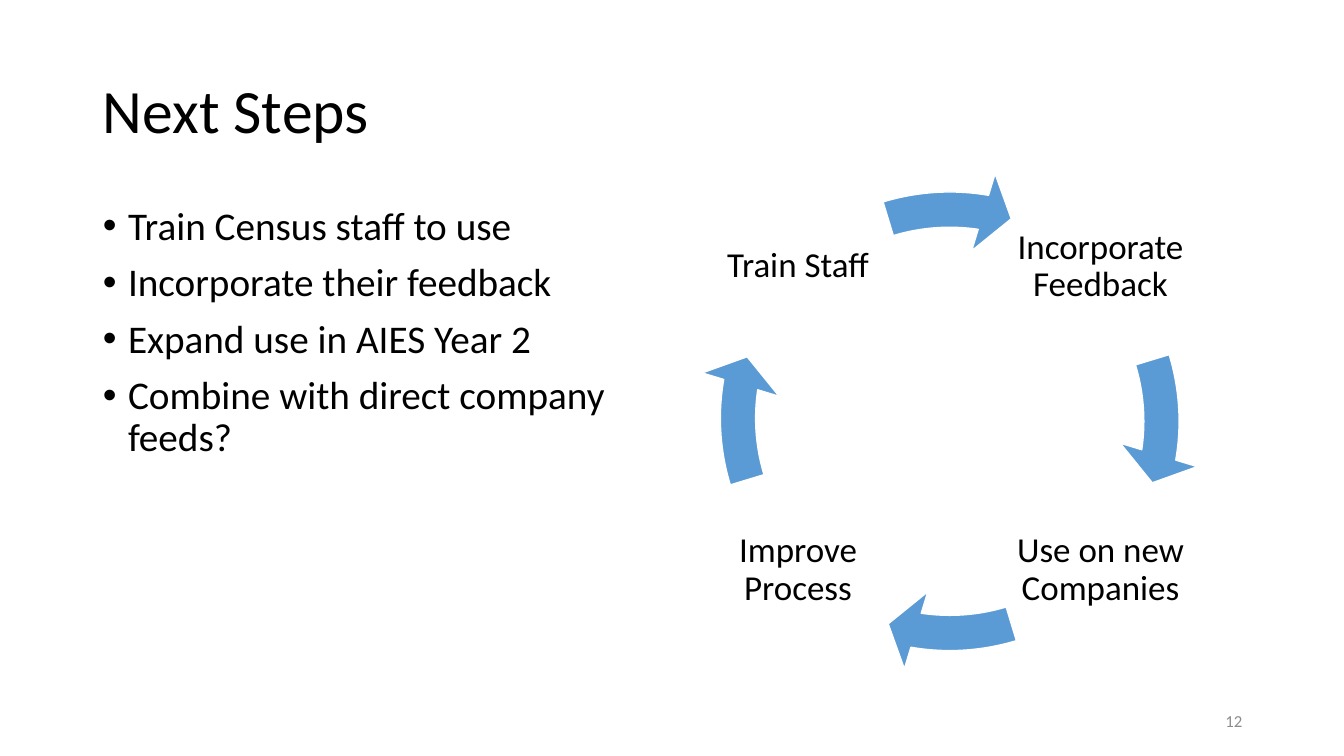
from dataclasses import dataclass

from lxml import etree
from pptx import Presentation
from pptx.dml.color import RGBColor
from pptx.enum import shapes, text
from pptx.oxml.ns import qn
from pptx.util import Inches, Pt

# Content
TITLE = "Next Steps"
STEPS = [
    "Train Census staff to use",
    "Incorporate their feedback",
    "Expand use in AIES Year 2",
    "Combine with direct company feeds?",
]
PAGE_NUMBER = "12"
# Stages run clockwise: label, column, row, top of the arrow that follows
STAGES = [
    ("Incorporate Feedback", 1, 0, 1.68),
    ("Use on new Companies", 1, 1, 1.68),
    ("Improve Process", 0, 1, 1.65),
    ("Train Staff", 0, 0, 1.68),
]


@dataclass(frozen=True)
class Theme:
    font: str = "Calibri"
    ink: RGBColor = RGBColor(0x00, 0x00, 0x00)
    muted: RGBColor = RGBColor(0x8C, 0x8C, 0x8C)
    arrow: RGBColor = RGBColor(0x5B, 0x9B, 0xD5)
    edge: RGBColor = RGBColor(0xFF, 0xFF, 0xFF)
    title: int = 44
    body: int = 28
    stage: int = 25
    number: int = 12


THEME = Theme()
ALIGN, ANCHOR = text.PP_ALIGN, text.MSO_ANCHOR

# Cycle geometry: lengths in inches, angles in hundred-thousands of 1/60000 degree
LABEL_LEFT, LABEL_TOP, LABEL_SIZE = 7.03, 1.76, 1.77
LABEL_PITCH_X, LABEL_PITCH_Y = 3, 3.01
LABEL_INSET = 0.03
RING_LEFT, RING_SIZE = 6.92, 5
QUARTER, FULL_TURN = 54, 216
THICKNESS, HEAD_ANGLE, HEAD_WIDTH = 0.07, 4.66, 0.08
ARROW_END, ARROW_START = 5.48, 205.86


def apply(target, **values):
    for name, value in values.items():
        setattr(target, name, value)


def place(box, left, top, width, height):
    apply(box, left=Inches(left), top=Inches(top),
          width=Inches(width), height=Inches(height))


def write(box, lines, size, color=THEME.ink, align=ALIGN.LEFT,
          anchor=ANCHOR.MIDDLE, spacing=0.9, gap=0, bullet=False):
    frame = box.text_frame
    apply(frame, word_wrap=True, auto_size=text.MSO_AUTO_SIZE.NONE,
          vertical_anchor=anchor)
    for index, line in enumerate(lines):
        para = frame.paragraphs[0] if index == 0 else frame.add_paragraph()
        apply(para, alignment=align, line_spacing=spacing,
              space_before=Pt(gap if index else 0), space_after=Pt(0))
        if bullet:
            props = para._p.get_or_add_pPr()
            props.set("marL", str(Inches(0.25)))
            props.set("indent", str(-Inches(0.25)))
            etree.SubElement(props, qn("a:buFont")).set("typeface", "Arial")
            etree.SubElement(props, qn("a:buChar")).set("char", "•")
        span = para.add_run()
        span.text = line
        apply(span.font, name=THEME.font, size=Pt(size))
        span.font.color.rgb = color


def add_text(page, at, line, size, inset=None, **style):
    box = page.shapes.add_textbox(*map(Inches, at))
    if inset is not None:
        for side in ("left", "top", "right", "bottom"):
            setattr(box.text_frame, f"margin_{side}", Inches(inset))
    write(box, [line], size, **style)


def add_arrow(page, index, top):
    arrow = page.shapes.add_shape(
        shapes.MSO_SHAPE.CIRCULAR_ARROW,
        *map(Inches, (RING_LEFT, top, RING_SIZE, RING_SIZE)))
    turn = index * QUARTER
    bends = (THICKNESS, HEAD_ANGLE, ARROW_END + turn,
             (ARROW_START + turn) % FULL_TURN, HEAD_WIDTH)
    for position, bend in enumerate(bends):
        arrow.adjustments[position] = bend
    arrow.shadow.inherit = False
    arrow.fill.solid()
    arrow.fill.fore_color.rgb = THEME.arrow
    arrow.line.color.rgb = THEME.edge
    arrow.line.width = Pt(1)


def main():
    deck = Presentation()
    apply(deck, slide_width=Inches(13.33), slide_height=Inches(7.5))
    page = deck.slides.add_slide(deck.slide_layouts[1])

    # Title and list
    title, body = page.shapes.title, page.placeholders[1]
    place(title, 0.92, 0.4, 11.5, 1.45)
    write(title, [TITLE], THEME.title)
    place(body, 0.92, 2, 5.19, 4.76)
    write(body, STEPS, THEME.body, anchor=ANCHOR.TOP, gap=10, bullet=True)

    # Page number
    add_text(page, (9.42, 6.95, 3, 0.4), PAGE_NUMBER, THEME.number,
             color=THEME.muted, align=ALIGN.RIGHT, spacing=1.0)

    # Cycle of stages
    for index, (label, column, row, arrow_top) in enumerate(STAGES):
        at = (LABEL_LEFT + column * LABEL_PITCH_X,
              LABEL_TOP + row * LABEL_PITCH_Y, LABEL_SIZE, LABEL_SIZE)
        add_text(page, at, label, THEME.stage, LABEL_INSET, align=ALIGN.CENTER)
        add_arrow(page, index, arrow_top)

    deck.save("out.pptx")


if __name__ == "__main__":
    main()
